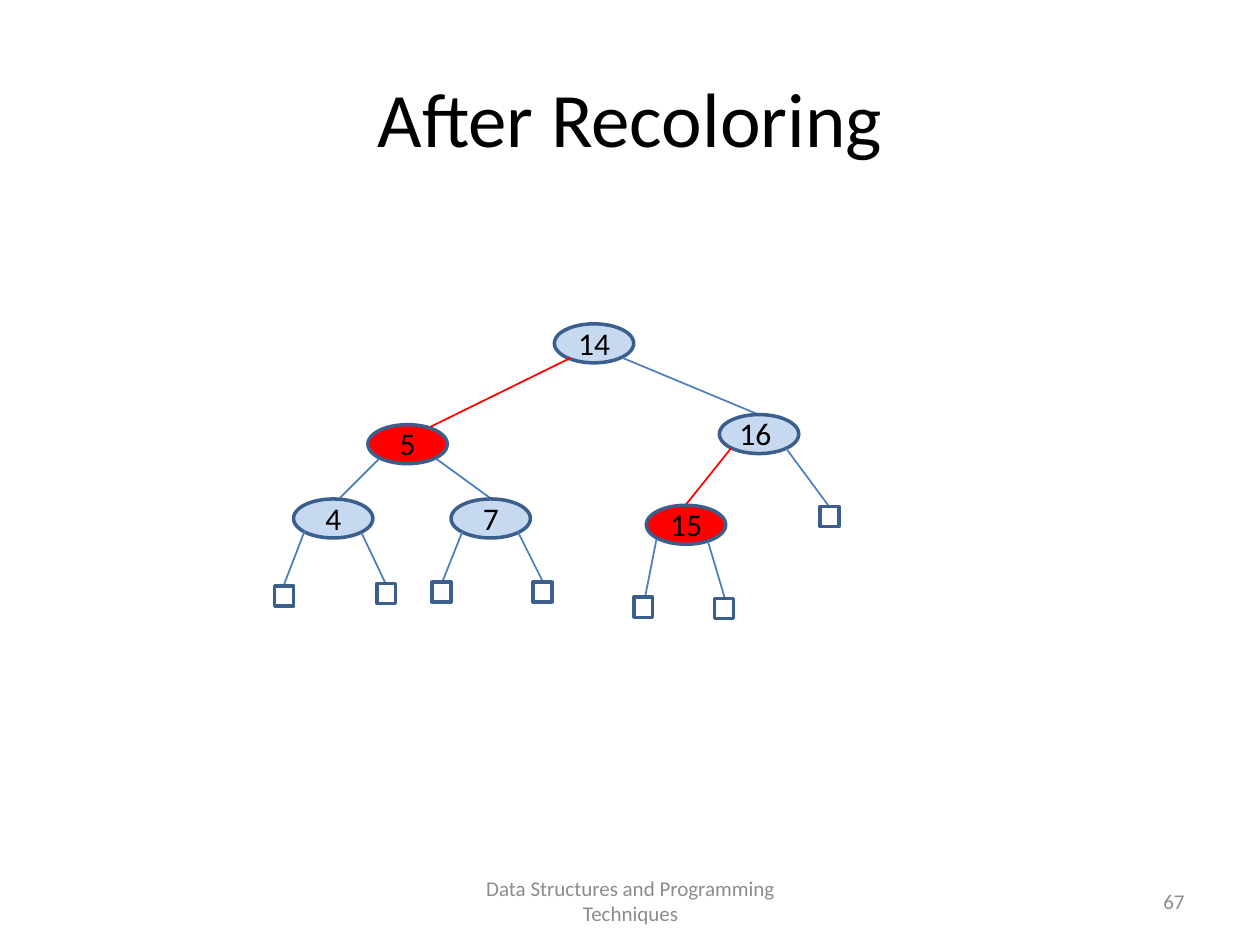
"""Build a slide showing a red-black tree after recoloring."""

from dataclasses import dataclass

from lxml.etree import SubElement
from pptx import Presentation
from pptx.dml.color import RGBColor
from pptx.enum.shapes import MSO_CONNECTOR, MSO_SHAPE
from pptx.enum.text import MSO_ANCHOR, PP_ALIGN
from pptx.oxml.ns import qn
from pptx.shapes.autoshape import Shape
from pptx.slide import Slide
from pptx.util import Inches, Pt

COLORS = {
    "text": "000000",
    "footer": "8C8C8C",
    "black_node": "C6D9F1",
    "red": "FF0000",
    "outline": "3A5F8C",
    "upper_edge": "4F81BD",
    "lower_edge": "4B7EBC",
}
FONT = "Calibri"
NODE_SIZE = (0.63, 0.31)
LEAF_SIZE = (0.15, 0.16)
LABEL_SIZE = (0.49, 0.4)
LABEL_RISE = 0.05


@dataclass(frozen=True)
class Edge:
    start: tuple[float, float]
    end: tuple[float, float]
    color: str = "lower_edge"


@dataclass(frozen=True)
class Node:
    key: str
    left: float
    top: float
    edges: tuple[Edge, ...]
    color: str = "black_node"
    label_inset: float = 0.07


NODES = [
    Node("14", 4.4, 2.57, (
        Edge((4.53, 2.84), (3.31, 3.44), "red"),
        Edge((4.94, 2.84), (6.02, 3.29), "upper_edge"),
    )),
    Node("16", 5.71, 3.29, (
        Edge((5.8, 3.56), (5.44, 4.01), "red"),
        Edge((6.24, 3.56), (6.58, 4.02), "upper_edge"),
    ), label_inset=0.04),
    Node("5", 2.92, 3.37, (
        Edge((3.01, 3.64), (2.7, 3.95)),
        Edge((3.46, 3.64), (3.9, 3.96)),
    ), color="red"),
    Node("4", 2.33, 3.96, (
        Edge((2.42, 4.21), (2.25, 4.65)),
        Edge((2.87, 4.23), (3.06, 4.63)),
    )),
    Node("7", 3.58, 3.96, (
        Edge((3.67, 4.22), (3.51, 4.62)),
        Edge((4.11, 4.22), (4.31, 4.62)),
    )),
    Node("15", 5.13, 4.01, (
        Edge((5.21, 4.28), (5.12, 4.74)),
        Edge((5.62, 4.3), (5.75, 4.74)),
    ), color="red"),
]
LEAVES = [
    (2.18, 4.65), (2.99, 4.63), (3.43, 4.62), (4.23, 4.62),
    (5.03, 4.74), (5.67, 4.75), (6.51, 4.02),
]


def rgb(name: str) -> RGBColor:
    """Look up a named colour."""
    return RGBColor.from_string(COLORS[name])


def place(shape: Shape, left: float, top: float, width: float, height: float) -> None:
    """Position a shape in inches."""
    shape.left, shape.top = Inches(left), Inches(top)
    shape.width, shape.height = Inches(width), Inches(height)


def write_text(
    shape: Shape,
    text: str,
    *,
    size: float,
    color: str = "text",
    align: PP_ALIGN = PP_ALIGN.CENTER,
    anchor: MSO_ANCHOR = MSO_ANCHOR.MIDDLE,
) -> None:
    """Write one formatted paragraph into a shape."""
    frame = shape.text_frame
    frame.word_wrap = True
    frame.vertical_anchor = anchor
    paragraph = frame.paragraphs[0]
    paragraph.alignment = align
    run = paragraph.add_run()
    run.text = text
    run.font.name = FONT
    run.font.size = Pt(size)
    run.font.color.rgb = rgb(color)


def add_text(slide: Slide, text: str, box: tuple[float, ...], **text_format) -> None:
    """Add a text box with formatted text."""
    shape = slide.shapes.add_textbox(*map(Inches, box))
    write_text(shape, text, **text_format)


def add_outlined(
    slide: Slide, kind: MSO_SHAPE, box: tuple[float, ...], fill: str | None = None
) -> None:
    """Add an outlined shape, hollow unless a fill is named."""
    shape = slide.shapes.add_shape(kind, *map(Inches, box))
    shape.shadow.inherit = False
    if fill is None:
        shape.fill.background()
    else:
        shape.fill.solid()
        shape.fill.fore_color.rgb = rgb(fill)
    shape.line.color.rgb = rgb("outline")
    shape.line.width = Pt(2)


def add_edge(slide: Slide, edge: Edge) -> None:
    """Connect a node to its child."""
    connector = slide.shapes.add_connector(
        MSO_CONNECTOR.STRAIGHT, *map(Inches, edge.start + edge.end)
    )
    connector.line.color.rgb = rgb(edge.color)
    connector.line.width = Pt(1)
    SubElement(connector._element.spPr, qn("a:effectLst"))


def add_node(slide: Slide, node: Node) -> None:
    """Draw a node, its edges and its key."""
    add_outlined(slide, MSO_SHAPE.OVAL, (node.left, node.top, *NODE_SIZE), node.color)
    for edge in node.edges:
        add_edge(slide, edge)
    label_box = (node.left + node.label_inset, node.top - LABEL_RISE, *LABEL_SIZE)
    add_text(slide, node.key, label_box, size=18, anchor=MSO_ANCHOR.TOP)


def main() -> None:
    """Create and save the presentation."""
    presentation = Presentation()
    presentation.slide_width, presentation.slide_height = Inches(10), Inches(7.5)
    slide = presentation.slides.add_slide(presentation.slide_layouts[5])

    title = slide.shapes.title
    place(title, 0.5, 0.3, 9, 1.25)
    write_text(title, "After Recoloring", size=44)

    for node in NODES:
        add_node(slide, node)
    for leaf in LEAVES:
        add_outlined(slide, MSO_SHAPE.RECTANGLE, (*leaf, *LEAF_SIZE))

    add_text(slide, "Data Structures and Programming Techniques",
             (3.42, 6.95, 3.17, 0.4), size=12, color="footer")
    add_text(slide, "67", (7.17, 6.95, 2.33, 0.4),
             size=12, color="footer", align=PP_ALIGN.RIGHT)
    presentation.save("out.pptx")


if __name__ == "__main__":
    main()
